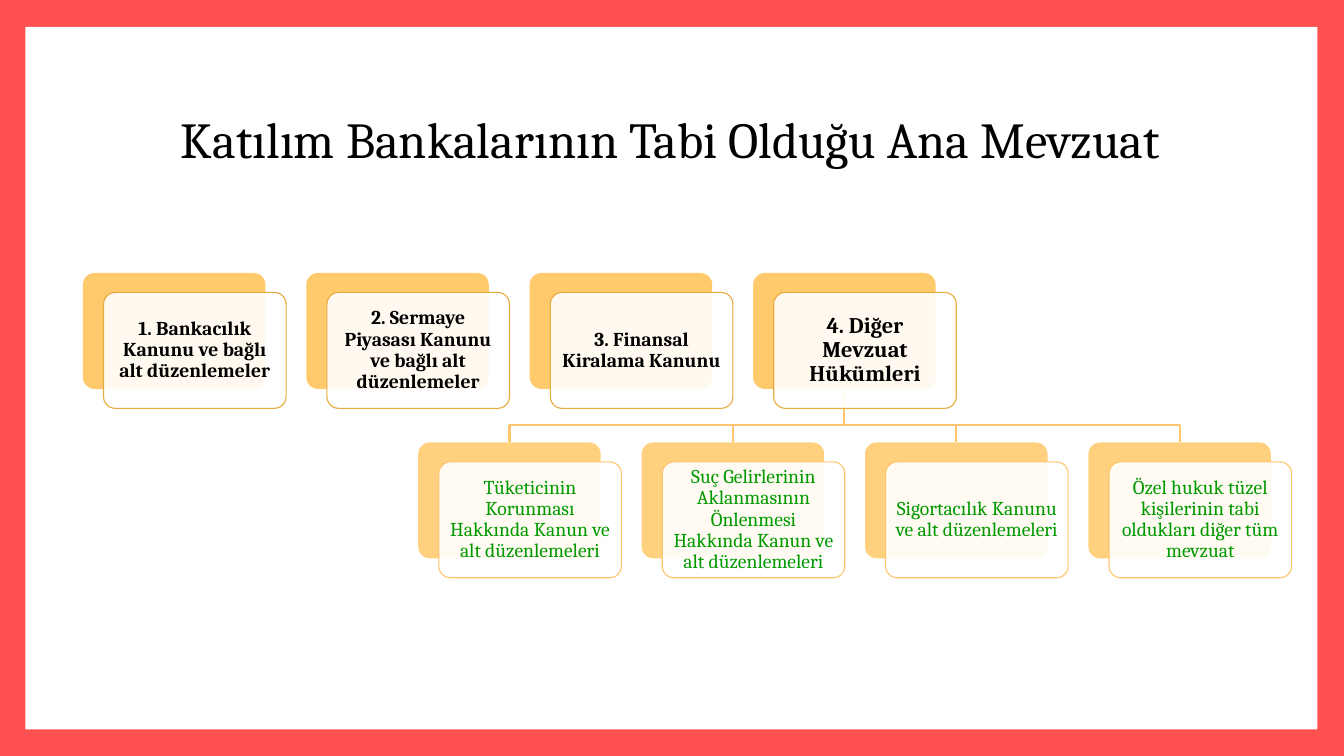
from lxml.etree import SubElement
from pptx import Presentation
from pptx.dml.color import RGBColor
from pptx.enum.shapes import MSO_SHAPE as Shape
from pptx.enum.text import MSO_ANCHOR as Anchor, PP_ALIGN as Align
from pptx.oxml.ns import qn
from pptx.util import Cm, Pt

TITLE = "Katılım Bankalarının Tabi Olduğu Ana Mevzuat"
MAIN_LAWS = [
    ("1. Bankacılık Kanunu ve bağlı alt düzenlemeler", 14),
    ("2. Sermaye Piyasası Kanunu ve bağlı alt düzenlemeler", 14),
    ("3. Finansal Kiralama Kanunu", 14),
    ("4. Diğer Mevzuat Hükümleri", 16),
]
OTHER_LAWS = [
    ("Tüketicinin Korunması Hakkında Kanun ve alt düzenlemeleri", 14),
    ("Suç Gelirlerinin Aklanmasının Önlenmesi Hakkında Kanun ve alt düzenlemeleri", 14),
    ("Sigortacılık Kanunu ve alt düzenlemeleri", 14),
    ("Özel hukuk tüzel kişilerinin tabi oldukları diğer tüm mevzuat", 14),
]
COLORS = {
    "frame": "FF5050", "page": "FFFFFF", "title": "000000",
    "card": "FFBD47", "main_edge": "E7AC40", "other_edge": "FFC56F",
    "main_text": "000000", "other_text": "009900",
}
FONT = "Cambria"
CARD_W, CARD_H, PITCH = 4.6, 2.92, 5.63
SHIFT_X, SHIFT_Y = 0.52, 0.49
MAIN_LEFT, MAIN_TOP = 2.09, 6.88
OTHER_LEFT, OTHER_TOP = 10.54, 11.15
BRANCH_Y = 10.72


def color(name):
    return RGBColor.from_string(COLORS[name])


def add_box(slide, kind, left, top, width, height, fill, opacity=100):
    box = slide.shapes.add_shape(kind, Cm(left), Cm(top), Cm(width), Cm(height))
    box.shadow.inherit = False
    box.fill.solid()
    box.fill.fore_color.rgb = color(fill)
    box.line.fill.background()
    if opacity < 100:
        tint = box.fill._xPr.find(qn("a:solidFill"))[0]
        SubElement(tint, qn("a:alpha"), val=str(opacity * 1000))
    return box


def write(box, text, size, ink, bold, inset):
    frame = box.text_frame
    frame.word_wrap = True
    frame.vertical_anchor = Anchor.MIDDLE
    frame.margin_left = frame.margin_right = Cm(inset)
    frame.margin_top = frame.margin_bottom = Cm(inset)
    paragraph = frame.paragraphs[0]
    paragraph.text = text
    paragraph.alignment = Align.CENTER
    paragraph.line_spacing = 0.9
    font = paragraph.runs[0].font
    font.name, font.size, font.bold = FONT, Pt(size), bold
    font.color.rgb = color(ink)


def add_row(slide, laws, left, top, level, opacity, bold):
    for index, (law, size) in enumerate(laws):
        x = left + index * PITCH
        back = add_box(slide, Shape.ROUNDED_RECTANGLE, x, top, CARD_W, CARD_H, "card", opacity)
        front = add_box(slide, Shape.ROUNDED_RECTANGLE, x + SHIFT_X, top + SHIFT_Y,
                        CARD_W, CARD_H, "page", 90)
        back.adjustments[0] = front.adjustments[0] = 0.1
        front.line.color.rgb = color(f"{level}_edge")
        front.line.width = Pt(0.79)
        write(front, law, size, f"{level}_text", bold, size * 0.011)


def add_branches(slide):
    parent_x = MAIN_LEFT + (len(MAIN_LAWS) - 1) * PITCH + CARD_W / 2
    for index in range(len(OTHER_LAWS)):
        child_x = OTHER_LEFT + index * PITCH + CARD_W / 2
        route = slide.shapes.build_freeform(Cm(parent_x), Cm(MAIN_TOP + CARD_H))
        turns = [(parent_x, BRANCH_Y), (child_x, BRANCH_Y), (child_x, OTHER_TOP)]
        route.add_line_segments([(Cm(x), Cm(y)) for x, y in turns], close=False)
        branch = route.convert_to_shape()
        branch.shadow.inherit = False
        branch.fill.background()
        branch.line.color.rgb = color("other_edge")
        branch.line.width = Pt(1.5)


def main():
    deck = Presentation()
    deck.slide_width, deck.slide_height = Cm(33.87), Cm(19.05)
    slide = deck.slides.add_slide(deck.slide_layouts[6])
    slide.background.fill.solid()
    slide.background.fill.fore_color.rgb = color("frame")
    add_box(slide, Shape.RECTANGLE, 0.64, 0.68, 32.56, 17.7, "page")
    heading = slide.shapes.add_textbox(Cm(3.18), Cm(1.7), Cm(27.43), Cm(3.76))
    write(heading, TITLE, 36, "title", False, 0.2)
    add_branches(slide)
    add_row(slide, MAIN_LAWS, MAIN_LEFT, MAIN_TOP, "main", 80, True)
    add_row(slide, OTHER_LAWS, OTHER_LEFT, OTHER_TOP, "other", 70, False)
    deck.save("out.pptx")


if __name__ == "__main__":
    main()
